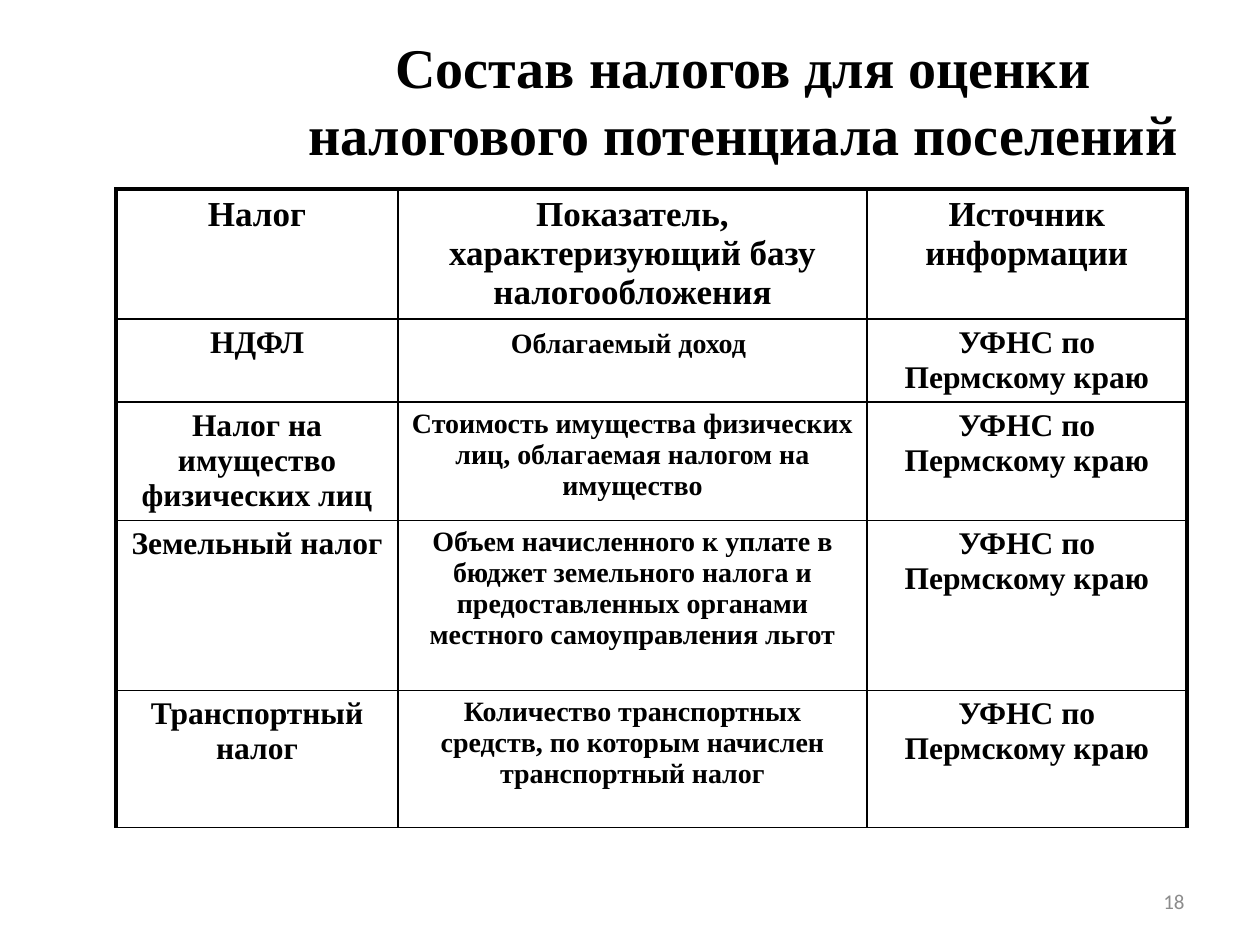
from pptx import Presentation
from pptx.dml.color import RGBColor
from pptx.enum.text import MSO_ANCHOR as Anchor, MSO_AUTO_SIZE as AutoSize, PP_ALIGN as Align
from pptx.oxml.ns import qn
from pptx.util import Inches, Pt
from lxml.etree import SubElement

BLACK = RGBColor(0x00, 0x00, 0x00)
WHITE = RGBColor(0xFF, 0xFF, 0xFF)
GRAY = RGBColor(0x8C, 0x8C, 0x8C)
SERIF = "Times New Roman"
THIN, THICK = 1, 2.25

COLUMN_WIDTHS = [2.24, 3.72, 2.54]
ROW_HEIGHTS = [1.03, 0.66, 0.94, 1.35, 1.09]
HEADERS = ["Налог", "Показатель, характеризующий базу налогообложения", "Источник информации"]
SOURCE = "УФНС по Пермскому краю"
TAXES = [
    ("НДФЛ", "Облагаемый доход"),
    ("Налог на имущество физических лиц",
     "Стоимость имущества физических лиц, облагаемая налогом на имущество"),
    ("Земельный налог",
     "Объем начисленного к уплате в бюджет земельного налога и предоставленных "
     "органами местного самоуправления льгот"),
    ("Транспортный налог",
     "Количество транспортных средств, по которым начислен транспортный налог"),
]


def add_span(para, text, size, font=SERIF, color=BLACK, bold=True, align=Align.CENTER):
    para.alignment = align
    span = para.add_run()
    span.text = text
    span.font.name = font
    span.font.size = Pt(size)
    span.font.bold = bold
    span.font.color.rgb = color


def set_border(cell, side, width):
    line = SubElement(cell._tc.get_or_add_tcPr(), qn(f"a:{side}"), w=str(Pt(width)))
    fill = SubElement(line, qn("a:solidFill"))
    SubElement(fill, qn("a:srgbClr"), val=str(BLACK))


def format_cell(cell, row, column):
    last_column = len(COLUMN_WIDTHS) - 1
    set_border(cell, "lnL", THICK if column == 0 else THIN)
    set_border(cell, "lnR", THICK if column == last_column else THIN)
    set_border(cell, "lnT", THICK if row == 0 else THIN)
    set_border(cell, "lnB", THIN)
    cell.fill.solid()
    cell.fill.fore_color.rgb = WHITE


def add_title(page):
    title = page.shapes.title
    title.left, title.top = Inches(2.33), Inches(0.25)
    title.width, title.height = Inches(7.25), Inches(1.08)
    title.fill.solid()
    title.fill.fore_color.rgb = WHITE
    frame = title.text_frame
    frame.auto_size = AutoSize.NONE
    frame.vertical_anchor = Anchor.MIDDLE
    para = frame.paragraphs[0]
    add_span(para, "Состав налогов для оценки ", 32)
    para.add_line_break()
    add_span(para, "налогового потенциала поселений ", 32)


def add_tax_table(page):
    rows = [HEADERS] + [[tax, base, SOURCE] for tax, base in TAXES]
    frame = page.shapes.add_table(
        len(rows), len(HEADERS), Inches(0.92), Inches(1.5),
        Inches(sum(COLUMN_WIDTHS)), Inches(sum(ROW_HEIGHTS)))
    table = frame.table
    table.first_row = table.horz_banding = False
    for column, width in zip(table.columns, COLUMN_WIDTHS):
        column.width = Inches(width)
    for row, height in zip(table.rows, ROW_HEIGHTS):
        row.height = Inches(height)
    for r, texts in enumerate(rows):
        for c, text in enumerate(texts):
            cell = table.cell(r, c)
            size = 20 if r == 0 else 16 if c == 1 else 18
            add_span(cell.text_frame.paragraphs[0], text, size)
            format_cell(cell, r, c)
    add_span(table.cell(1, 1).text_frame.paragraphs[0], " ", 18)


def add_page_number(page):
    box = page.shapes.add_textbox(Inches(7.17), Inches(6.95), Inches(2.33), Inches(0.4))
    frame = box.text_frame
    frame.word_wrap = True
    frame.vertical_anchor = Anchor.MIDDLE
    add_span(frame.paragraphs[0], "18", 12, font="Calibri", color=GRAY,
             bold=False, align=Align.RIGHT)


def main():
    deck = Presentation()
    deck.slide_width, deck.slide_height = Inches(10), Inches(7.5)
    page = deck.slides.add_slide(deck.slide_layouts[5])
    add_tax_table(page)
    add_page_number(page)
    add_title(page)
    deck.save("out.pptx")


if __name__ == "__main__":
    main()
